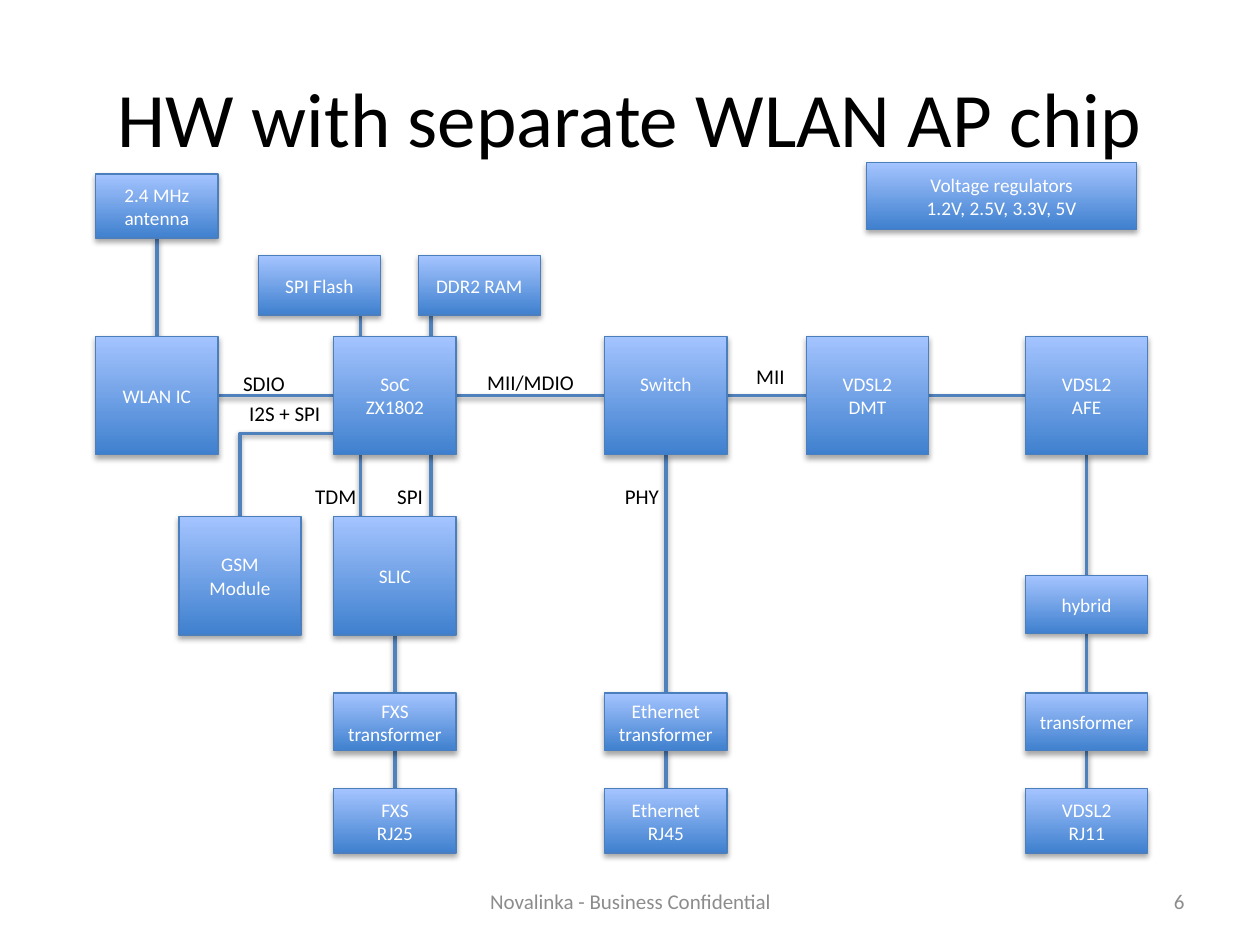
"""Build the block diagram slide of a gateway with a separate WLAN AP chip."""
from lxml import etree
from pptx import Presentation
from pptx import util as u
from pptx.dml.color import RGBColor
from pptx.enum import shapes, text
from pptx.oxml import parse_xml
from pptx.oxml.ns import nsdecls, qn

TOP = RGBColor(0xA4, 0xC4, 0xFF)
BASE = RGBColor(0x3F, 0x80, 0xCE)
EDGE = RGBColor(0x4B, 0x7E, 0xBC)
WIRE = RGBColor(0x4F, 0x81, 0xBD)
WHITE = RGBColor(0xFF, 0xFF, 0xFF)
BLACK = RGBColor(0, 0, 0)
GREY = RGBColor(0x8C, 0x8C, 0x8C)

TITLE = "HW with separate WLAN AP chip"
WIDE = 0.97
ROWS = {
    "power": (1.29, 0.53), "air": (1.38, 0.51), "store": (2.03, 0.47),
    "chip": (2.67, 0.94), "voice": (4.1, 0.94), "hybrid": (4.57, 0.46),
    "coil": (5.5, 0.46), "jack": (6.26, 0.51),
}
BOXES = {
    "power": ("Voltage regulators\n1.2V, 2.5V, 3.3V, 5V", 6.88, "power", 2.14),
    "air": ("2.4 MHz\nantenna", 0.76, "air", WIDE),
    "flash": ("SPI Flash", 2.05, "store", WIDE),
    "ram": ("DDR2 RAM", 3.32, "store", WIDE),
    "wlan": ("WLAN IC", 0.76, "chip", WIDE),
    "soc": ("SoC\nZX1802", 2.65, "chip", WIDE),
    "switch": ("Switch", 4.8, "chip", WIDE),
    "dmt": ("VDSL2\nDMT", 6.4, "chip", WIDE),
    "afe": ("VDSL2\nAFE", 8.14, "chip", WIDE),
    "gsm": ("GSM Module", 1.42, "voice", WIDE),
    "slic": ("SLIC", 2.65, "voice", WIDE),
    "hybrid": ("hybrid", 8.14, "hybrid", WIDE),
    "fxs": ("FXS\ntransformer", 2.65, "coil", WIDE),
    "ether": ("Ethernet transformer", 4.8, "coil", WIDE),
    "coil": ("transformer", 8.14, "coil", WIDE),
    "rj25": ("FXS\nRJ25", 2.65, "jack", WIDE),
    "rj45": ("Ethernet\nRJ45", 4.8, "jack", WIDE),
    "rj11": ("VDSL2\nRJ11", 8.14, "jack", WIDE),
}
ACROSS = [("wlan", "soc"), ("soc", "switch"), ("switch", "dmt"), ("dmt", "afe")]
DOWN = [
    ("air", "wlan", None), ("flash", "soc", 2.86), ("ram", "soc", 3.42),
    ("soc", "slic", 2.86), ("soc", "slic", 3.42), ("slic", "fxs", None),
    ("fxs", "rj25", None), ("switch", "ether", None), ("ether", "rj45", None),
    ("afe", "hybrid", None), ("hybrid", "coil", None), ("coil", "rj11", None),
]
BEND = 3.44
LABELS = [
    ("SDIO", 1.81, 2.89, 0.57), ("I2S + SPI", 1.72, 3.13, 1.08),
    ("MII/MDIO", 3.62, 2.88, 1.18), ("MII", 5.83, 2.84, 0.57),
    ("TDM", 2.38, 3.79, 0.57), ("SPI", 2.97, 3.79, 0.57),
    ("PHY", 4.81, 3.79, 0.57),
]
FOOT = [
    ("Novalinka - Business Confidential", 3.42, 3.17, text.PP_ALIGN.CENTER),
    ("6", 7.17, 2.33, text.PP_ALIGN.RIGHT),
]


def write(shape, words, size, color, align=text.PP_ALIGN.CENTER,
          anchor=text.MSO_ANCHOR.MIDDLE):
    frame = shape.text_frame
    frame.text = words
    frame.word_wrap = True
    frame.vertical_anchor = anchor
    for para in frame.paragraphs:
        para.alignment = align
        for run in para.runs:
            run.font.name = "Calibri"
            run.font.size = u.Pt(size)
            run.font.color.rgb = color


def shade(shape, drop, alpha):
    props = shape._element.spPr
    for old in props.findall(qn("a:effectLst")):
        props.remove(old)
    props.append(parse_xml(
        f'<a:effectLst {nsdecls("a")}><a:outerShdw blurRad="40000" '
        f'dist="{drop}" dir="5400000" rotWithShape="0"><a:srgbClr val="000000">'
        f'<a:alpha val="{alpha}"/></a:srgbClr></a:outerShdw></a:effectLst>'))


def place(key):
    _, left, row, width = BOXES[key]
    top, height = ROWS[row]
    return left, top, width, height


def join(slide, start, end, kind=shapes.MSO_CONNECTOR.STRAIGHT):
    line = slide.shapes.add_connector(kind, *map(u.Inches, start + end))
    line.line.color.rgb = WIRE
    line.line.width = u.Pt(2)
    shade(line, 20000, 38000)
    return line


def wire(slide):
    for one, two in ACROSS:
        left, top, width, height = place(one)
        mid = top + height / 2
        join(slide, (left + width, mid), (place(two)[0], mid))
    for one, two, at in DOWN:
        left, top, width, height = place(one)
        mid = at or left + width / 2
        join(slide, (mid, top + height), (mid, place(two)[1]))
    left, top, width, _ = place("gsm")
    bent = join(slide, (place("soc")[0], BEND), (left + width / 2, top),
                shapes.MSO_CONNECTOR.ELBOW)
    bent._element.spPr.find(qn("a:prstGeom")).set("prst", "bentConnector2")


def block(slide, key):
    box = slide.shapes.add_shape(
        shapes.MSO_SHAPE.RECTANGLE, *map(u.Inches, place(key)))
    box.fill.gradient()
    box.fill.gradient_angle = 90
    for stop, color in zip(box.fill.gradient_stops, (BASE, TOP)):
        stop.color.rgb = color
    box.line.color.rgb = EDGE
    box.line.width = u.Pt(0.75)
    shade(box, 23000, 35000)
    write(box, BOXES[key][0], 11, WHITE)
    return box


def note(slide, spot, *style):
    box = slide.shapes.add_textbox(*map(u.Inches, spot))
    write(box, *style)


def main():
    deck = Presentation()
    deck.slide_width, deck.slide_height = u.Inches(10), u.Inches(7.5)
    slide = deck.slides.add_slide(deck.slide_layouts[5])
    title = slide.shapes.title
    title.left, title.top, title.width, title.height = map(
        u.Inches, (0.5, 0.3, 9, 1.25))
    write(title, TITLE, 44, BLACK)
    wire(slide)
    blocks = {key: block(slide, key) for key in BOXES}
    blocks["switch"].text_frame.margin_bottom = u.Inches(0.23)
    for words, left, top, width in LABELS:
        note(slide, (left, top, width, 0.3), words, 12, BLACK,
             text.PP_ALIGN.CENTER, text.MSO_ANCHOR.TOP)
    for words, left, width, align in FOOT:
        note(slide, (left, 6.95, width, 0.4), words, 12, GREY, align)
    deck.save("out.pptx")


if __name__ == "__main__":
    main()
